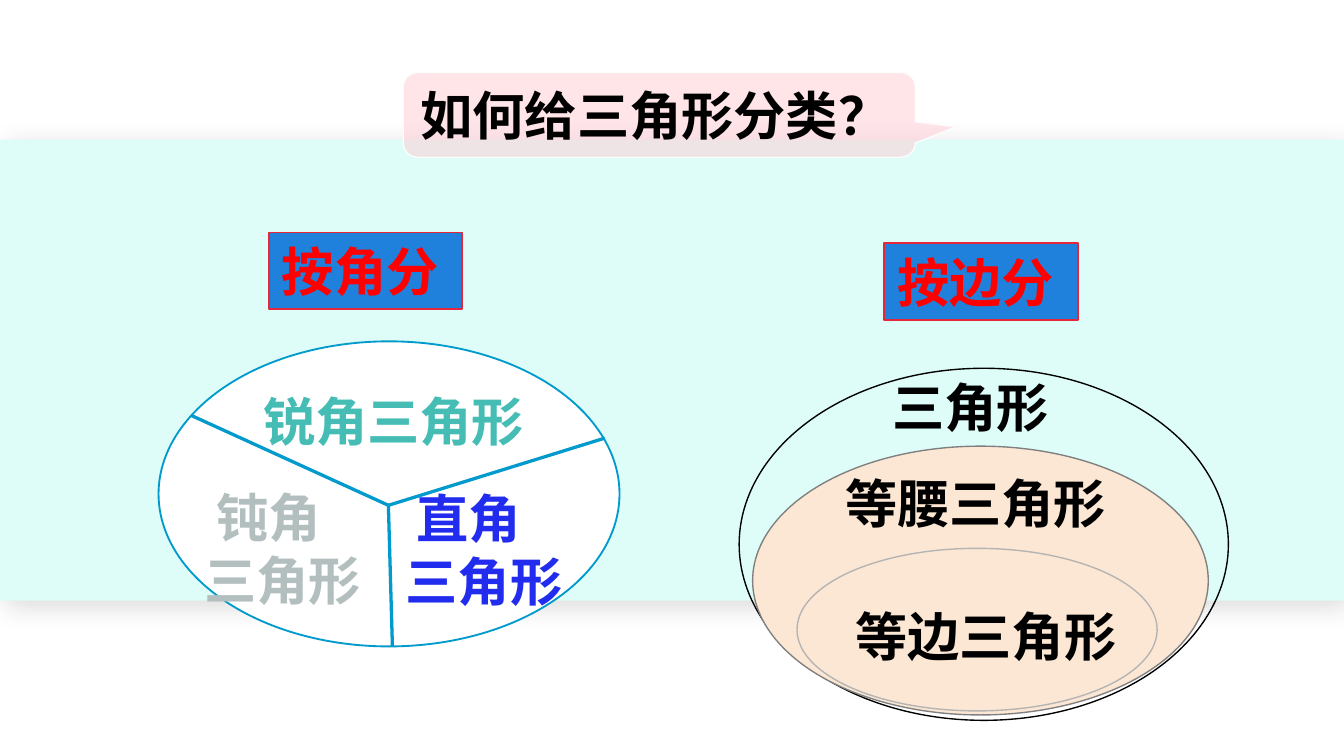
from dataclasses import dataclass
from typing import Optional

from lxml import etree
from pptx import Presentation
from pptx import util as u
from pptx.dml.color import RGBColor
from pptx.enum import shapes, text
from pptx.oxml.ns import qn

COLOURS = {
    "band": "DEFDF8", "white": "FFFFFF", "black": "000000", "sector": "009ACC",
    "acute": "45BDB5", "obtuse": "B3BEBF", "right": "222CEE",
    "label": "2081DC", "label_edge": "E52739", "label_text": "FF0000",
    "title": "FFC8D2", "title_edge": "FCFCFC",
    "isosceles": "FCE7D4", "isosceles_edge": "808080", "equilateral_edge": "B4B4B4",
}
CJK = "Noto Sans CJK SC"
OVAL = shapes.MSO_SHAPE.OVAL
RECTANGLE = shapes.MSO_SHAPE.RECTANGLE
CALLOUT = shapes.MSO_SHAPE.ROUNDED_RECTANGULAR_CALLOUT


@dataclass
class Box:
    left: float
    top: float
    width: float
    height: float

    def lengths(self) -> list:
        return [u.Inches(v) for v in (self.left, self.top, self.width, self.height)]


@dataclass
class Caption:
    wording: str
    box: Box
    colour: str = "black"
    centred: bool = False
    first_indent: float = 0


def rgb(name: str) -> RGBColor:
    return RGBColor.from_string(COLOURS[name])


def write(holder, wording: str, *, colour: str = "black", font: str = CJK,
          centred: bool = False, middle: bool = False, first_indent: float = 0) -> None:
    frame = holder.text_frame
    frame.word_wrap = True
    frame.vertical_anchor = text.MSO_ANCHOR.MIDDLE if middle else text.MSO_ANCHOR.TOP
    for number, line in enumerate(wording.split("\n")):
        paragraph = frame.add_paragraph() if number else frame.paragraphs[0]
        paragraph.alignment = text.PP_ALIGN.CENTER if centred else text.PP_ALIGN.LEFT
        if first_indent and number == 0:
            paragraph._p.get_or_add_pPr().set("indent", str(u.Inches(first_indent)))
        run = paragraph.add_run()
        run.text = line
        run.font.size = u.Pt(28)
        run.font.bold = True
        run.font.name = font
        run.font.color.rgb = rgb(colour)
        etree.SubElement(run._r.get_or_add_rPr(), qn("a:ea")).set("typeface", CJK)


def add_figure(slide, kind, box: Box, fill: Optional[str] = None,
               edge: Optional[str] = None, weight: float = 0.75):
    figure = slide.shapes.add_shape(kind, *box.lengths())
    figure.shadow.inherit = False
    if fill:
        figure.fill.solid()
        figure.fill.fore_color.rgb = rgb(fill)
    else:
        figure.fill.background()
    if edge:
        figure.line.color.rgb = rgb(edge)
        figure.line.width = u.Pt(weight)
    else:
        figure.line.fill.background()
    return figure


def add_caption(slide, caption: Caption) -> None:
    holder = slide.shapes.add_textbox(*caption.box.lengths())
    write(holder, caption.wording, colour=caption.colour,
          centred=caption.centred, first_indent=caption.first_indent)


def add_divider(slide, hub: tuple, rim: tuple) -> None:
    divider = slide.shapes.add_connector(
        shapes.MSO_CONNECTOR.STRAIGHT, *[u.Inches(v) for v in hub + rim])
    divider.line.color.rgb = rgb("sector")
    divider.line.width = u.Pt(1.75)
    etree.SubElement(divider._element.spPr, qn("a:effectLst"))


def add_band(slide) -> None:
    band = add_figure(slide, RECTANGLE, Box(0, 1.04, 10, 3.43), "band")
    effects = band._element.spPr.find(qn("a:effectLst"))
    shadow = etree.SubElement(effects, qn("a:outerShdw"), blurRad=str(u.Pt(15)),
                              dist=str(u.Pt(5)), dir=str(45 * 60000), rotWithShape="0")
    tint = etree.SubElement(shadow, qn("a:srgbClr"), val=COLOURS["black"])
    etree.SubElement(tint, qn("a:alpha"), val="15000")


def add_angle_diagram(slide) -> None:
    add_figure(slide, OVAL, Box(1.18, 2.54, 3.43, 2.27), "white", "sector", 1)
    for rim in ((1.42, 3.09), (2.92, 4.81), (4.5, 3.26)):
        add_divider(slide, (2.89, 3.76), rim)
    for caption in (
        Caption("锐角三角形", Box(1.86, 2.85, 2.23, 0.57), "acute"),
        Caption("钝角\n三角形", Box(1.42, 3.56, 1.4, 1.04), "obtuse", first_indent=0.09),
        Caption("直角\n三角形", Box(2.92, 3.57, 1.49, 1.04), "right", first_indent=0.08),
    ):
        add_caption(slide, caption)


def add_labels(slide) -> None:
    for wording, left, top in (("按角分", 2, 1.73), ("按边分", 6.58, 1.81)):
        label = add_figure(slide, RECTANGLE, Box(left, top, 1.44, 0.57),
                           "label", "label_edge", 1)
        write(label, wording, colour="label_text", font="Arial")


def add_title(slide) -> None:
    title = add_figure(slide, CALLOUT, Box(3, 0.54, 3.81, 0.63), "title", "title_edge")
    for number, value in enumerate((0.58, 0.14, 0.17)):
        title.adjustments[number] = value
    tint = title._element.spPr.find(qn("a:solidFill"))[0]
    etree.SubElement(tint, qn("a:alpha"), val="49000")
    write(title, "如何给三角形分类？", middle=True)


def add_side_diagram(slide) -> None:
    for box, fill, edge, weight, caption in (
        (Box(5.5, 2.74, 3.64, 2.62), None, "black", 0,
         Caption("三角形", Box(6.15, 2.74, 1.93, 0.75), first_indent=0.39)),
        (Box(5.6, 3.32, 3.39, 2), "isosceles", "isosceles_edge", 0.75,
         Caption("等腰三角形", Box(6.11, 3.46, 2.3, 0.57), centred=True)),
        (Box(5.93, 4.08, 2.68, 1.21), None, "equilateral_edge", 0,
         Caption("等边三角形", Box(6.23, 4.45, 2.21, 0.57), centred=True)),
    ):
        add_figure(slide, OVAL, box, fill, edge, weight)
        add_caption(slide, caption)


def main() -> None:
    deck = Presentation()
    deck.slide_width = u.Inches(10)
    deck.slide_height = deck.slide_width * 9 // 16
    slide = deck.slides.add_slide(deck.slide_layouts[6])
    add_band(slide)
    add_angle_diagram(slide)
    add_labels(slide)
    add_title(slide)
    add_side_diagram(slide)
    deck.save("out.pptx")


if __name__ == "__main__":
    main()
